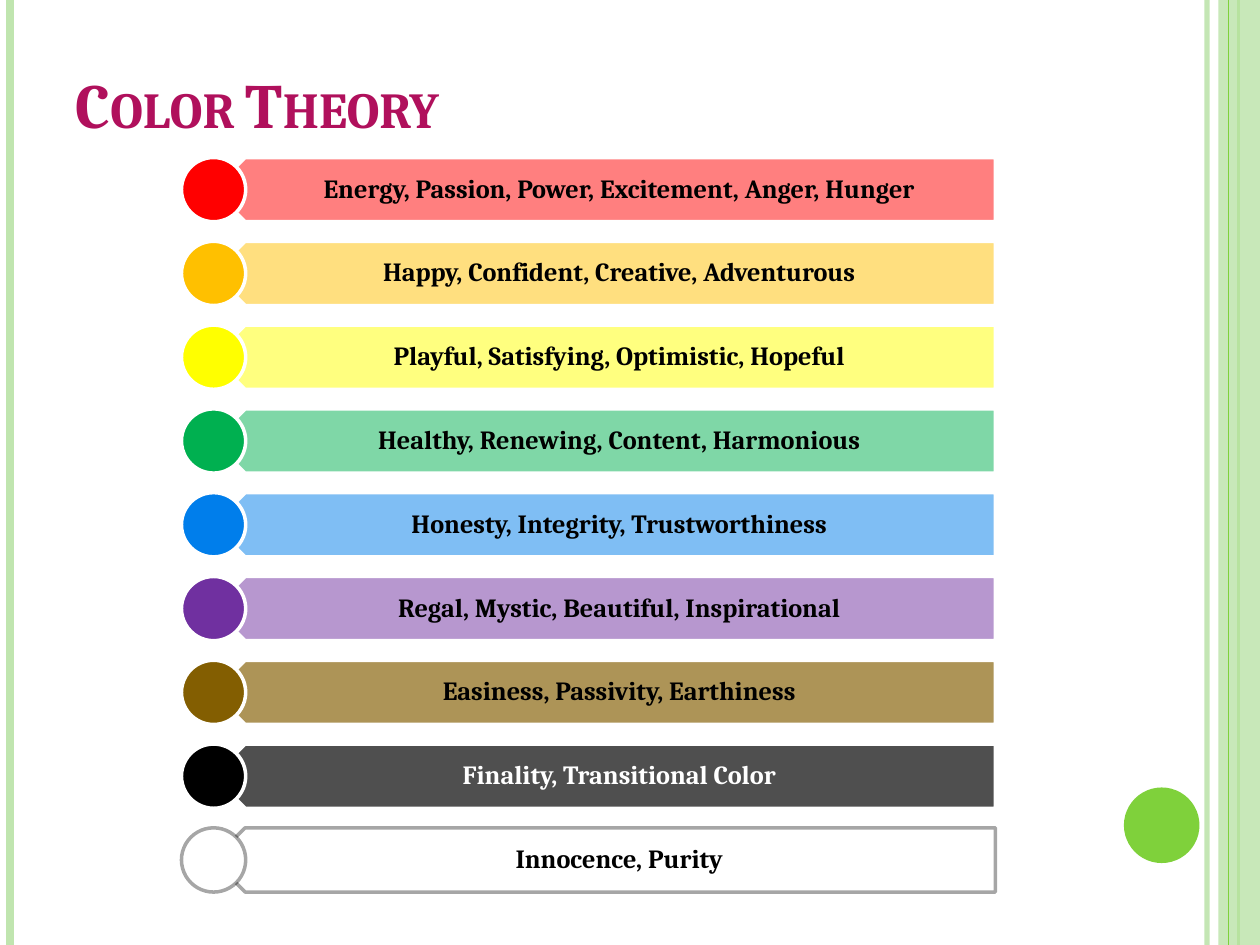
from lxml import etree
from pptx import Presentation
from pptx import util as u
from pptx.dml.color import RGBColor
from pptx.enum import shapes, text
from pptx.oxml.ns import qn

COLORS = {
    "white": "FFFFFF", "black": "000000", "title": "B0105C",
    "pale": "C0E5AF", "green": "7FD13B",
    "red": "FF0000", "amber": "FFC000", "yellow": "FFFF00",
    "leaf": "00B050", "blue": "007EEB", "purple": "7030A0",
    "brown": "835E01",
}

# color, bar opacity, meanings
ROWS = [
    ("red", 50, "Energy, Passion, Power, Excitement, Anger, Hunger"),
    ("amber", 50, "Happy, Confident, Creative, Adventurous"),
    ("yellow", 50, "Playful, Satisfying, Optimistic, Hopeful"),
    ("leaf", 50, "Healthy, Renewing, Content, Harmonious"),
    ("blue", 50, "Honesty, Integrity, Trustworthiness"),
    ("purple", 50, "Regal, Mystic, Beautiful, Inspirational"),
    ("brown", 66, "Easiness, Passivity, Earthiness"),
    ("black", 69, "Finality, Transitional Color"),
    ("white", 100, "Innocence, Purity"),
]
TOP, STEP, SIZE = 1.25, 0.665, 0.51

# x, color, width in points, opacity
LEFT_RULES = [(9.58, "pale", 3, 93), (0.08, "pale", 4.5, 100),
              (9.83, "green", 1.5, 100)]
EDGE_RULE = (9.75, "green", 0.75, 100)


class Deck:
    face = "Cambria"

    def __init__(self):
        self.prs = Presentation()
        self.prs.slide_width = u.Inches(10)
        self.prs.slide_height = u.Inches(7.5)
        self.slide = self.prs.slides.add_slide(self.prs.slide_layouts[5])

    def paint(self, fill, color, alpha=100):
        """Fill with a solid color at an opacity in percent."""
        fill.solid()
        fill.fore_color.rgb = RGBColor.from_string(COLORS[color])
        if alpha < 100:
            tint = fill._xPr.find(qn("a:solidFill"))[0]
            etree.SubElement(tint, qn("a:alpha"), val=str(alpha * 1000))

    def style(self, par, size, color):
        font = par.font
        font.name, font.size, font.bold = self.face, u.Pt(size), True
        font.color.rgb = RGBColor.from_string(COLORS[color])

    def title(self, words, box):
        head = self.slide.shapes.title
        head.left, head.top, head.width, head.height = map(u.Inches, box)
        frame = head.text_frame
        frame.text = words
        frame.auto_size = text.MSO_AUTO_SIZE.NONE
        frame.vertical_anchor = text.MSO_ANCHOR.BOTTOM
        par = frame.paragraphs[0]
        par.alignment = text.PP_ALIGN.LEFT
        self.style(par, 36, "title")
        par.font._element.set("cap", "small")

    def rule(self, x, color, width, alpha):
        """Draw a vertical line down the whole slide."""
        line = self.slide.shapes.add_connector(
            shapes.MSO_CONNECTOR.STRAIGHT,
            u.Inches(x), 0, u.Inches(x), self.prs.slide_height)
        line.line.width = u.Pt(width)
        self.paint(line.line.fill, color, alpha)
        etree.SubElement(line._element.spPr, qn("a:effectLst"))

    def shape(self, kind, box, color, alpha=100, edge=None):
        """Draw a preset shape; edge is a color and an opacity."""
        item = self.slide.shapes.add_shape(kind, *map(u.Inches, box))
        item.shadow.inherit = False
        self.paint(item.fill, color, alpha)
        if edge:
            item.line.width = u.Pt(2)
            self.paint(item.line.fill, *edge)
        else:
            item.line.fill.background()
        return item

    def label(self, words, box, color):
        frame = self.slide.shapes.add_textbox(*map(u.Inches, box)).text_frame
        frame.word_wrap = True
        frame.vertical_anchor = text.MSO_ANCHOR.MIDDLE
        frame.margin_left, frame.margin_right = u.Inches(0.23), u.Inches(0.12)
        frame.margin_top = frame.margin_bottom = u.Inches(0.06)
        par = frame.paragraphs[0]
        par.text = words
        par.alignment = text.PP_ALIGN.CENTER
        par.line_spacing = 0.9
        self.style(par, 15, color)

    def row(self, top, color, alpha, words):
        """Draw a pointed bar with its words and a color disc."""
        edge = ("black", 35) if color == "white" else ("white", 100)
        bar = self.shape(shapes.MSO_SHAPE.PENTAGON, (1.69, top, 6.21, SIZE),
                         color, alpha, edge)
        bar.rotation = 180
        self.label(words, (1.82, top, 6.08, SIZE),
                   "white" if color == "black" else "black")
        self.shape(shapes.MSO_SHAPE.OVAL, (1.44, top, SIZE, SIZE),
                   color, edge=edge)


def main():
    deck = Deck()
    for rule in LEFT_RULES:
        deck.rule(*rule)
    deck.shape(shapes.MSO_SHAPE.RECTANGLE, (9.67, 0, 0.33, 7.5), "pale", 87)
    deck.rule(*EDGE_RULE)
    deck.shape(shapes.MSO_SHAPE.OVAL, (8.92, 6.25, 0.6, 0.6), "green")
    deck.title("Color Theory", (0.5, 0.3, 8.17, 0.87))
    for i, row in enumerate(ROWS):
        deck.row(TOP + i * STEP, *row)
    deck.prs.save("out.pptx")


if __name__ == "__main__":
    main()
